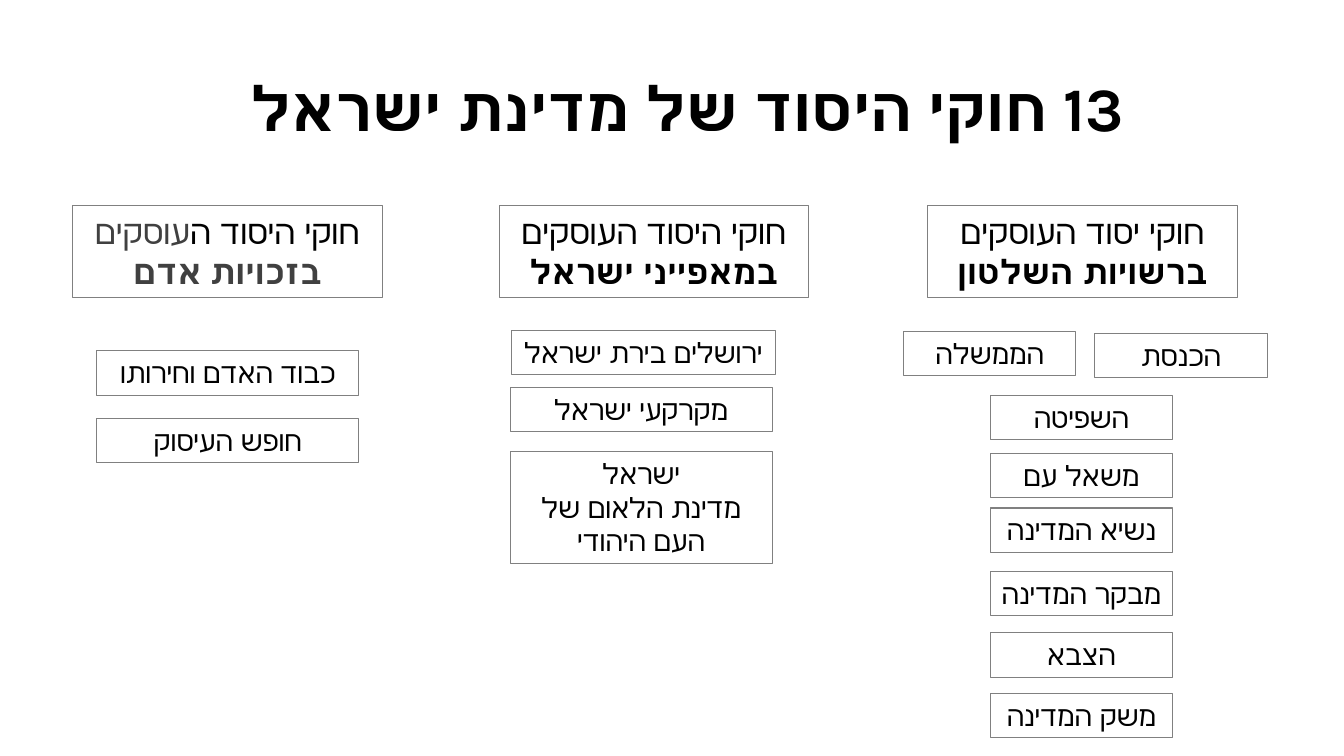
from lxml import etree
from pptx import Presentation
from pptx.dml.color import RGBColor
from pptx.enum.text import MSO_ANCHOR, MSO_AUTO_SIZE, PP_ALIGN
from pptx.oxml.ns import qn
from pptx.util import Inches, Pt

CENTER = PP_ALIGN.CENTER
BOTTOM = MSO_ANCHOR.BOTTOM
GROW = MSO_AUTO_SIZE.SHAPE_TO_FIT_TEXT

HEAD_FONT = "Karla"
BODY_FONT = "TeX Gyre Adventor"
BLACK, GRAY, EDGE = "000000", "404040", "808080"


def color(code):
    return RGBColor.from_string(code)


def write(para, text, size=20, font=BODY_FONT, ink=BLACK, bold=False):
    """Add a run, with its font set for Latin and Hebrew."""
    run = para.add_run()
    run.text = text
    run.font.size = Pt(size)
    run.font.bold = bold
    run.font.color.rgb = color(ink)
    run.font.name = font
    hebrew = etree.SubElement(run.font._element, qn("a:cs"))
    hebrew.set("typeface", font)


class Deck:
    """Holds the style and the current slide."""

    def __init__(self):
        self.show = Presentation()
        self.show.slide_width = Inches(13.33)
        self.show.slide_height = Inches(7.5)
        self.slide = self.show.slides.add_slide(self.show.slide_layouts[6])

    def text(self, left, top, width, height, paras):
        """Each paragraph is a list of (text, format) runs."""
        box = self.slide.shapes.add_textbox(
            Inches(left), Inches(top), Inches(width), Inches(height))
        frame = box.text_frame
        frame.word_wrap = True
        for i, runs in enumerate(paras):
            para = frame.paragraphs[0] if i == 0 else frame.add_paragraph()
            para.alignment = CENTER
            para._p.get_or_add_pPr().set("rtl", "1")
            for words, style in runs:
                write(para, words, **style)
        return box

    def title(self, words):
        style = dict(size=44, font=HEAD_FONT, bold=True)
        frame = self.text(0.67, 0.52, 12.29, 0.98, [[(words, style)]]).text_frame
        frame.vertical_anchor = BOTTOM
        frame.margin_left = frame.margin_right = Inches(0.13)
        frame.margin_top = frame.margin_bottom = Inches(0.07)
        frame.paragraphs[0].line_spacing = 0.85

    def frame(self, left, top, width, height, paras):
        box = self.text(left, top, width, height, paras)
        box.text_frame.auto_size = GROW
        box.line.color.rgb = color(EDGE)
        box.line.width = Pt(0.75)

    def head(self, left, paras):
        self.frame(left, 2.04, 3.07, 0.91, paras)

    def law(self, left, top, width, *lines, height=0.44):
        self.frame(left, top, width, height, [[(line, {})] for line in lines])


def main():
    deck = Deck()
    deck.title("13 חוקי היסוד של מדינת ישראל")

    # Column heads
    plain = dict(size=24)
    bold = dict(size=24, bold=True)
    gray = dict(size=24, font=HEAD_FONT, ink=GRAY)
    deck.head(9.2, [[("חוקי יסוד העוסקים ", plain), ("ברשויות השלטון", bold)]])
    deck.head(4.95, [[("חוקי היסוד העוסקים", plain)],
                     [("במאפייני ישראל", bold)]])
    deck.head(0.72, [[("חוקי היסוד ה", plain), ("עוסקים ", gray),
                      ("בזכויות אדם", dict(gray, bold=True))]])

    # Branches of government
    deck.law(10.86, 3.31, 1.71, "הכנסת")
    deck.law(8.96, 3.29, 1.71, "הממשלה")
    for top, name in [(3.92, "השפיטה"), (4.5, "משאל עם"),
                      (5.04, "נשיא המדינה"), (5.67, "מבקר המדינה"),
                      (6.28, "הצבא"), (6.88, "משק המדינה")]:
        deck.law(9.82, top, 1.81, name)

    # Character of the state
    deck.law(5.07, 3.28, 2.62, "ירושלים בירת ישראל")
    deck.law(5.06, 3.84, 2.6, "מקרקעי ישראל")
    deck.law(5.06, 4.48, 2.6, "ישראל", "מדינת הלאום של העם היהודי",
             height=1.11)

    # Human rights
    deck.law(0.96, 3.48, 2.6, "כבוד האדם וחירותו")
    deck.law(0.96, 4.15, 2.6, "חופש העיסוק")

    deck.show.save("out.pptx")


if __name__ == "__main__":
    main()
